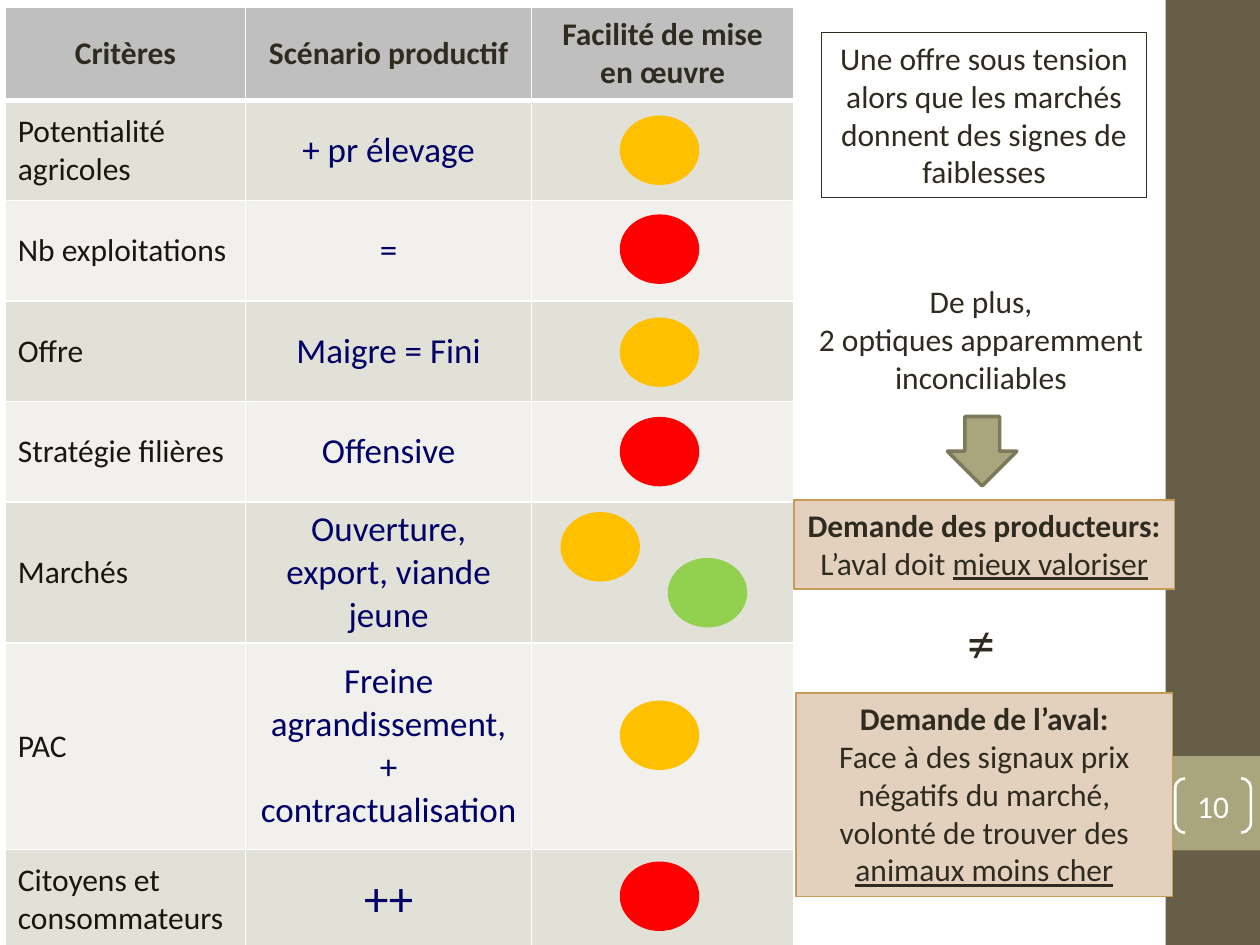
from lxml import etree
from pptx import Presentation
from pptx.dml.color import RGBColor
from pptx.enum.shapes import MSO_SHAPE
from pptx.enum.text import MSO_ANCHOR, MSO_AUTO_SIZE, PP_ALIGN
from pptx.oxml.ns import qn
from pptx.util import Pt

RECT, OVAL = MSO_SHAPE.RECTANGLE, MSO_SHAPE.OVAL
ARROW, BRACKET = MSO_SHAPE.DOWN_ARROW, MSO_SHAPE.DOUBLE_BRACKET
LEFT, CENTER = PP_ALIGN.LEFT, PP_ALIGN.CENTER
TOP, MIDDLE = MSO_ANCHOR.TOP, MSO_ANCHOR.MIDDLE
GROW = MSO_AUTO_SIZE.SHAPE_TO_FIT_TEXT

FONT = "Calibri"
COLORS = {
    "white": "FFFFFF", "brown": "675E47", "olive": "A9A57C", "moss": "7D7A5C",
    "ink": "2F2B20", "dark": "181610", "navy": "000066", "gray": "BFBFBF",
    "odd": "E2E1D7", "even": "F1F0EC", "tan": "E3D1BD", "gold": "C69C58",
    "amber": "FFC000", "red": "FF0000", "green": "92D050",
}

HEADS = ["Critères", "Scénario productif", "Facilité de mise en œuvre"]
ROWS = [
    ("Potentialité agricoles", "+ pr élevage", 20),
    ("Nb exploitations", "=", 20),
    ("Offre", "Maigre = Fini", 20),
    ("Stratégie filières", "Offensive", 20),
    ("Marchés", "Ouverture, export, viande jeune", 20),
    ("PAC", "Freine agrandissement, + contractualisation", 20),
    ("Citoyens et consommateurs", "++", 28),
]
WIDTHS = [137.4, 163.4, 149.8]
HEIGHTS = [53.3] + [57.4] * 4 + [68.4, 118, 57.4]

MID = 354.2
LIGHTS = [
    (MID, 66, "amber"), (MID, 122.5, "red"), (MID, 181.4, "amber"),
    (MID, 238.2, "red"), (320.3, 292.6, "amber"), (381.6, 318.8, "green"),
    (MID, 400.3, "amber"), (MID, 492.3, "red"),
]

PLUS = [[("De plus,", "")], [("2 optiques apparemment", "")], [("inconciliables", "")]]
MAKERS = [[("Demande des producteurs:", "b")],
          [("L’aval doit ", ""), ("mieux valoriser", "u")]]
BUYERS = [[("Demande de l’aval:", "b")],
          [("Face à des signaux prix négatifs du marché, volonté de trouver des ", ""),
           ("animaux moins cher", "u")]]
SUPPLY = [[("Une offre sous tension alors que les marchés donnent des signes de faiblesses", "")]]
UNLIKE = [[("≠", "")]]
NOTES = [
    ((459.4, 157.6, 202.3, 72.7), PLUS, None, None, 0, False, 18, CENTER),
    ((453.6, 285.8, 217.6, 50.9), MAKERS, "tan", "gold", 1, False, 18, CENTER),
    ((455, 396, 215, 116.3), BUYERS, "tan", "gold", 1, True, 18, CENTER),
    ((545.8, 343.4, 31, 46.1), UNLIKE, None, None, 0, False, 32, LEFT),
    ((469.4, 18.7, 185.8, 94.3), SUPPLY, None, "ink", 0.75, True, 18, CENTER),
]


def rgb(name):
    return RGBColor.from_string(COLORS[name])


def style(para, size, color, align, bold=False):
    para.alignment = align
    font = para.font
    font.name, font.size, font.bold = FONT, Pt(size), bold
    font.color.rgb = rgb(color)


def draw(slide, kind, box, fill=None, line=None, width=0):
    shape = slide.shapes.add_shape(kind, *map(Pt, box))
    shape.shadow.inherit = False
    if fill:
        shape.fill.solid()
        shape.fill.fore_color.rgb = rgb(fill)
    else:
        shape.fill.background()
    if line:
        shape.line.color.rgb = rgb(line)
        shape.line.width = Pt(width)
    else:
        shape.line.fill.background()
    return shape


def write(shape, paras, size, color, align, wrap, anchor):
    frame = shape.text_frame
    frame.word_wrap, frame.vertical_anchor = wrap, anchor
    for i, runs in enumerate(paras):
        para = frame.add_paragraph() if i else frame.paragraphs[0]
        style(para, size, color, align)
        for text, mark in runs:
            run = para.add_run()
            run.text = text
            if mark == "b":
                run.font.bold = True
            if mark == "u":
                run.font.underline = True


def border(cell, edges):
    props = cell._tc.get_or_add_tcPr()
    for edge, width in edges.items():
        line = etree.SubElement(props, qn("a:ln" + edge), w=str(Pt(width)))
        fill = etree.SubElement(line, qn("a:solidFill"))
        etree.SubElement(fill, qn("a:srgbClr"), val=COLORS["white"])


def add_grid(slide):
    box = map(Pt, (3, 4, sum(WIDTHS), sum(HEIGHTS)))
    table = slide.shapes.add_table(len(HEIGHTS), len(WIDTHS), *box).table
    for col, width in zip(table.columns, WIDTHS):
        col.width = Pt(width)
    for row, height in zip(table.rows, HEIGHTS):
        row.height = Pt(height)
    lines = [[(text, 18, "ink", CENTER) for text in HEADS]]
    for label, value, size in ROWS:
        lines.append([(label, 18, "dark", LEFT), (value, size, "navy", CENTER),
                      ("", 18, "dark", LEFT)])
    for r, line in enumerate(lines):
        shade = ("odd" if r % 2 else "even") if r else "gray"
        for c, (text, size, color, align) in enumerate(line):
            cell = table.cell(r, c)
            border(cell, {"L": 1, "R": 1, "T": 3 if r == 1 else 1, "B": 1 if r else 3})
            cell.fill.solid()
            cell.fill.fore_color.rgb = rgb(shade)
            cell.vertical_anchor = MIDDLE
            cell.text = text
            style(cell.text_frame.paragraphs[0], size, color, align, r == 0)


def main():
    """Build the slide on the ease of carrying out the productive scenario."""
    deck = Presentation()
    deck.slide_width, deck.slide_height = Pt(720), Pt(540)
    slide = deck.slides.add_slide(deck.slide_layouts[6])

    draw(slide, RECT, (666, 0, 54, 540), "brown")
    draw(slide, RECT, (666, 432, 54, 54), "olive")
    number = draw(slide, BRACKET, (671.6, 444.8, 43.2, 31), None, "white", 1.5)
    number.adjustments[0] = 0.18
    frame = number.text_frame
    frame.margin_left = frame.margin_right = frame.margin_top = frame.margin_bottom = 0
    write(number, [[("10", "")]], 18, "white", CENTER, True, MIDDLE)

    add_grid(slide)
    for x, y, color in LIGHTS:
        draw(slide, OVAL, (x, y, 45.4, 39.7), color)
    draw(slide, ARROW, (541.4, 238, 39.7, 39.7), "olive", "moss", 2)
    for box, paras, fill, line, width, wrap, size, align in NOTES:
        if fill or line:
            note = draw(slide, RECT, box, fill, line, width)
        else:
            note = slide.shapes.add_textbox(*map(Pt, box))
        write(note, paras, size, "ink", align, wrap, TOP)
        note.text_frame.auto_size = GROW
    deck.save("out.pptx")


if __name__ == "__main__":
    main()
